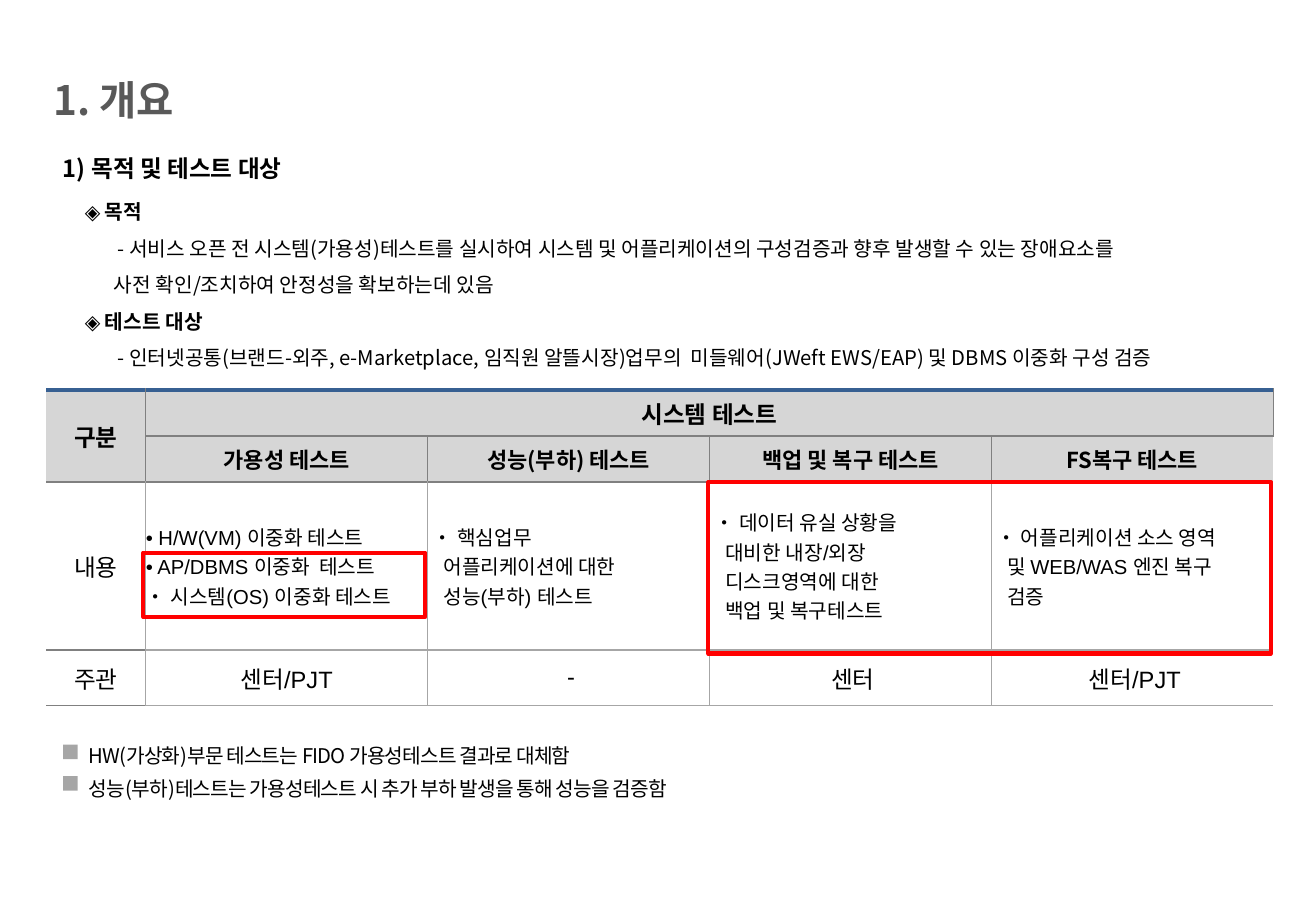
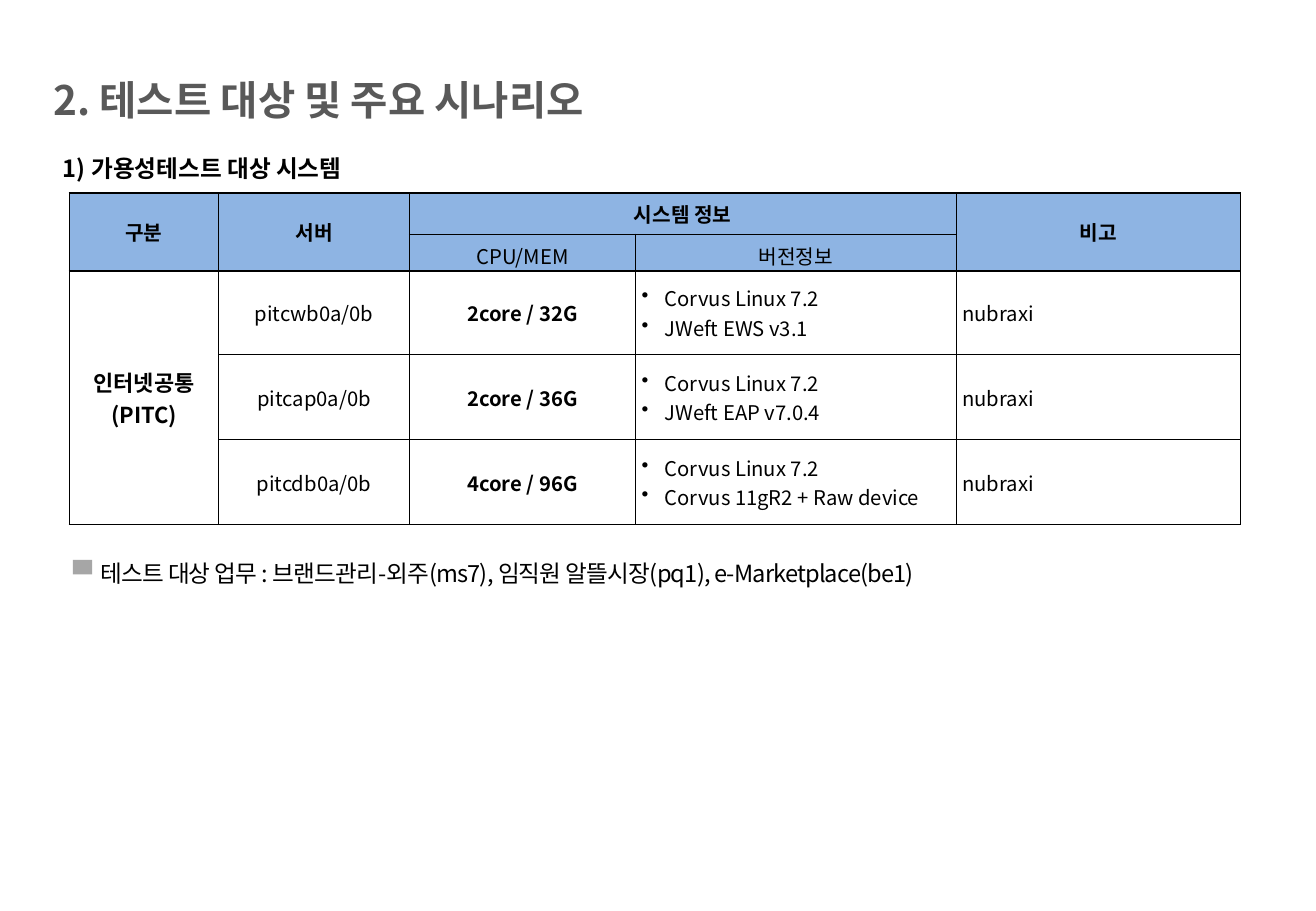
from dataclasses import dataclass

from lxml import etree
from pptx import Presentation
from pptx import util as u
from pptx.dml import color
from pptx.enum import shapes, text
from pptx.oxml import ns


@dataclass(frozen=True)
class Theme:
    sans: str = "Noto Sans CJK KR"
    latin: str = "Arial"
    ink: str = "000000"
    title_ink: str = "595959"
    marker: str = "A6A6A6"
    alert: str = "FF0000"
    head_gray: str = "D6D6D6"
    head_blue: str = "8EB4E3"
    white: str = "FFFFFF"
    top_rule: str = "376092"
    dark_rule: str = "808080"
    light_rule: str = "A6A6A6"
    title_size: int = 24
    lead_size: int = 14
    label_size: int = 13
    body_size: int = 12
    plain_table: str = "{2D5ABB26-0587-4C30-8999-92F81FD0307C}"


theme = Theme()
CENTER = text.PP_ALIGN.CENTER
LEFT = text.PP_ALIGN.LEFT


def write(frame, content, size=theme.body_size, font=theme.sans, ink=theme.ink, bold=False,
          align=LEFT, leading=None, before=0, indent=0, bullet=False, spacing=None):
    for line in content.split("\n"):
        para = frame.add_paragraph() if frame.text else frame.paragraphs[0]
        props = para._p.get_or_add_pPr()
        props.set("marL", str(u.Inches(0.19 if bullet else indent)))
        props.set("indent", str(u.Inches(-0.19 if bullet else 0)))
        if bullet:
            etree.SubElement(props, ns.qn("a:buChar"), char="•")
        para.alignment = align
        if leading:
            para.line_spacing = u.Pt(leading)
        if before:
            para.space_before = u.Pt(before)
        span = para.add_run()
        span.text = line
        span.font.size = u.Pt(size)
        span.font.bold = bold
        span.font.color.rgb = color.RGBColor.from_string(ink)
        span.font.name = font
        run_props = span._r.get_or_add_rPr()
        etree.SubElement(run_props, ns.qn("a:ea"), typeface=theme.sans)
        if spacing:
            run_props.set("spc", str(int(spacing * 100)))


def style_cell(cell, borders, fill=None, margins=(0, 0, 0, 0)):
    props = cell._tc.get_or_add_tcPr()
    for side in "LRTB":
        if side in borders:
            rule, width = borders[side]
            edge = etree.SubElement(props, ns.qn("a:ln" + side), w=str(u.Pt(width)))
            solid = etree.SubElement(edge, ns.qn("a:solidFill"))
            etree.SubElement(solid, ns.qn("a:srgbClr"), val=rule)
    if fill:
        cell.fill.solid()
        cell.fill.fore_color.rgb = color.RGBColor.from_string(fill)
    else:
        cell.fill.background()
    cell.vertical_anchor = text.MSO_ANCHOR.MIDDLE
    cell.margin_left, cell.margin_top, cell.margin_right, cell.margin_bottom = map(u.Inches, margins)


deck = Presentation()
deck.slide_width, deck.slide_height = u.Inches(10.83), u.Inches(7.5)

page_plans = [
    {
        "title": "1. 개요",
        "heading": "1) 목적 및 테스트 대상",
        "body_height": 2.02,
        "table": (0.38, 3.21, [0.82] + [2.32] * 4, [0.38, 0.38, 1.38, 0.46]),
        "notes": [
            ("HW(가상화)부문 테스트는 FIDO 가용성테스트 결과로 대체함", 0.73, 6.05, theme.body_size, 0.52, 6.13, 0.12),
            ("성능(부하)테스트는 가용성테스트 시 추가 부하 발생을 통해 성능을 검증함", 0.73, 6.32, theme.body_size, 0.52, 6.39, 0.12),
        ],
    },
    {
        "title": "2. 테스트 대상 및 주요 시나리오",
        "heading": "1) 가용성테스트 대상 시스템",
        "body_height": 0.41,
        "table": (0.57, 1.59, [1.23, 1.57, 1.86, 2.64, 2.34], [0.34, 0.3, 0.69, 0.7, 0.7]),
        "notes": [
            ("테스트 대상 업무 : 브랜드관리-외주(ms7), 임직원 알뜰시장(pq1), e-Marketplace(be1)",
             0.83, 4.52, theme.lead_size, 0.6, 4.61, 0.16),
        ],
    },
]

pages, bodies, tables = [], [], []
for plan in page_plans:
    page = deck.slides.add_slide(deck.slide_layouts[5])
    pages.append(page)

    title = page.shapes.title
    title.left, title.top, title.width, title.height = map(u.Inches, (0.34, 0.5, 8.06, 0.64))
    title.text_frame.vertical_anchor = text.MSO_ANCHOR.MIDDLE
    write(title.text_frame, plan["title"], size=theme.title_size, ink=theme.title_ink, bold=True)

    box = page.shapes.add_textbox(*map(u.Inches, (0.38, 1.09, 10.24, plan["body_height"])))
    box.text_frame.word_wrap = True
    write(box.text_frame, plan["heading"], size=theme.lead_size, bold=True, leading=26, indent=0.04)
    bodies.append(box.text_frame)

    left, top, widths, heights = plan["table"]
    holder = page.shapes.add_table(len(heights), len(widths),
                                   *map(u.Inches, (left, top, sum(widths), sum(heights))))
    table = holder.table
    table._tbl.tblPr.find(ns.qn("a:tableStyleId")).text = theme.plain_table
    for column, width in zip(table.columns, widths):
        column.width = u.Inches(width)
    for row, height in zip(table.rows, heights):
        row.height = u.Inches(height)
    tables.append(table)

    for note, note_left, note_top, size, mark_left, mark_top, mark_width in plan["notes"]:
        box = page.shapes.add_textbox(*map(u.Inches, (note_left, note_top, 7.6, 0.27)))
        frame = box.text_frame
        frame.word_wrap = True
        frame.margin_left = frame.margin_top = frame.margin_right = frame.margin_bottom = 0
        write(frame, note, size=size, leading=round(size * 1.62, 1), spacing=-0.5)
        mark = page.shapes.add_shape(shapes.MSO_SHAPE.RECTANGLE,
                                     *map(u.Inches, (mark_left, mark_top, mark_width, 0.12)))
        mark.shadow.inherit = False
        mark.fill.solid()
        mark.fill.fore_color.rgb = color.RGBColor.from_string(theme.marker)
        mark.line.fill.background()

overview_lines = [
    ("◈ 목적", True, 0.22, 3),
    ("- 서비스 오픈 전 시스템(가용성)테스트를 실시하여 시스템 및 어플리케이션의 구성검증과 향후 발생할 수 있는 장애요소를", False, 0.49, 0),
    ("사전 확인/조치하여 안정성을 확보하는데 있음", False, 0.46, 0),
    ("◈ 테스트 대상", True, 0.22, 0),
    ("- 인터넷공통(브랜드-외주, e-Marketplace, 임직원 알뜰시장)업무의  미들웨어(JWeft EWS/EAP) 및 DBMS 이중화 구성 검증", False, 0.49, 0),
]
for line, bold, indent, before in overview_lines:
    write(bodies[0], line, bold=bold, indent=indent, before=before, leading=21.6)

scope_rows = [
    ["구분", "시스템 테스트", None, None, None],
    [None, "가용성 테스트", "성능(부하) 테스트", "백업 및 복구 테스트", "FS복구 테스트"],
    ["내용",
     "• H/W(VM) 이중화 테스트\n• AP/DBMS 이중화  테스트\n• 시스템(OS) 이중화 테스트",
     "• 핵심업무\n어플리케이션에 대한\n성능(부하) 테스트",
     "• 데이터 유실 상황을\n대비한 내장/외장\n디스크영역에 대한\n백업 및 복구테스트",
     "• 어플리케이션 소스 영역\n및 WEB/WAS 엔진 복구\n검증"],
    ["주관", "센터/PJT", "-", "센터", "센터/PJT"],
]
scope = tables[0]
scope.cell(0, 0).merge(scope.cell(1, 0))
scope.cell(0, 1).merge(scope.cell(0, 4))
for r, row in enumerate(scope_rows):
    for c, content in enumerate(row):
        cell = scope.cell(r, c)
        header = r < 2
        inner = (theme.dark_rule if header else theme.light_rule, 1)
        dark = (theme.dark_rule, 1)
        borders = {"T": (theme.top_rule, 2.25) if r == 0 else dark if r < 3 or c == 0 else inner,
                   "B": dark if header or c == 0 else inner}
        if c > 0:
            borders["L"] = inner
        if c < 4:
            borders["R"] = inner
        style_cell(cell, borders, fill=theme.head_gray if header else None,
                   margins=(0.04 if r > 1 and c > 1 else 0, 0, 0, 0))
        if content is None:
            continue
        if r == 2 and c > 0:
            for line in content.split("\n"):
                write(cell.text_frame, line, font=theme.latin, indent=0 if line.startswith("•") else 0.09)
        else:
            write(cell.text_frame, content, size=theme.label_size if r == 1 else theme.lead_size,
                  font=theme.sans if header else theme.latin, bold=header, align=CENTER)

for area in [(5.83, 3.97, 4.63, 1.41), (1.18, 4.55, 2.32, 0.53)]:
    highlight = pages[0].shapes.add_shape(shapes.MSO_SHAPE.RECTANGLE, *map(u.Inches, area))
    highlight.shadow.inherit = False
    highlight.fill.background()
    highlight.line.color.rgb = color.RGBColor.from_string(theme.alert)
    highlight.line.width = u.Pt(2.5)

server_rows = [
    ["구분", "서버", "시스템 정보", None, "비고"],
    [None, None, "CPU/MEM", "버전정보", None],
    ["인터넷공통\n(PITC)", "pitcwb0a/0b", "2core / 32G", "Corvus Linux 7.2\nJWeft EWS v3.1", "nubraxi"],
    [None, "pitcap0a/0b", "2core / 36G", "Corvus Linux 7.2\nJWeft EAP v7.0.4", "nubraxi"],
    [None, "pitcdb0a/0b", "4core / 96G", "Corvus Linux 7.2\nCorvus 11gR2 + Raw device", "nubraxi"],
]
servers = tables[1]
for first, last in [((0, 0), (1, 0)), ((0, 1), (1, 1)), ((0, 2), (0, 3)), ((0, 4), (1, 4)), ((2, 0), (4, 0))]:
    servers.cell(*first).merge(servers.cell(*last))
for r, row in enumerate(server_rows):
    for c, content in enumerate(row):
        cell = servers.cell(r, c)
        header = r < 2
        style_cell(cell, dict.fromkeys("LRTB", (theme.ink, 1)),
                   fill=theme.head_blue if header else theme.white,
                   margins=(0.05, 0.05, 0.05, 0 if r == 1 else 0.05))
        if content is not None:
            write(cell.text_frame, content,
                  size=theme.label_size if r > 1 and c == 0 else theme.body_size,
                  font=theme.latin if r == 0 else theme.sans,
                  bold=r == 0 or (r > 1 and c in (0, 2)),
                  align=CENTER if header or c < 3 else LEFT,
                  bullet=r > 1 and c == 3)

deck.save("out.pptx")
